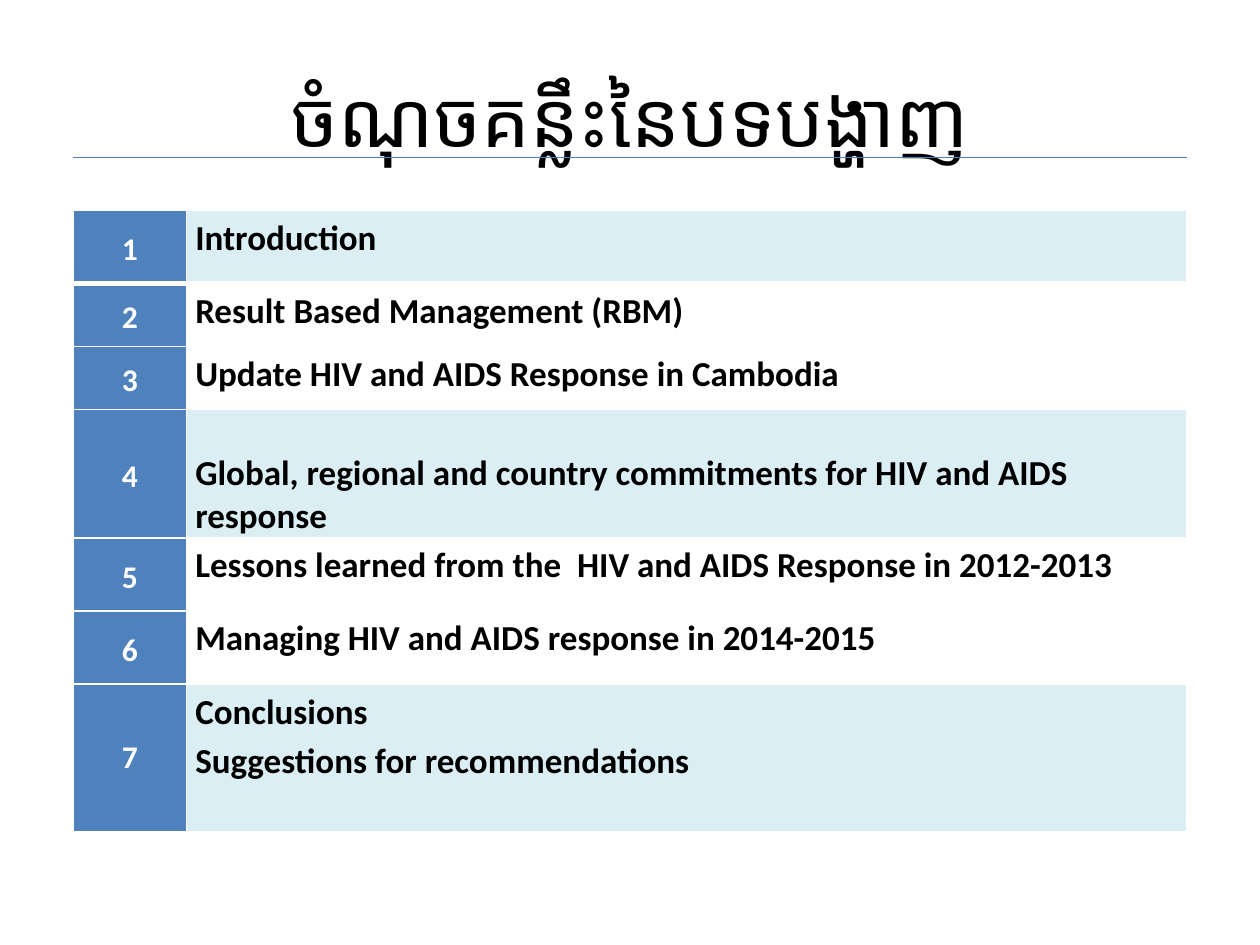
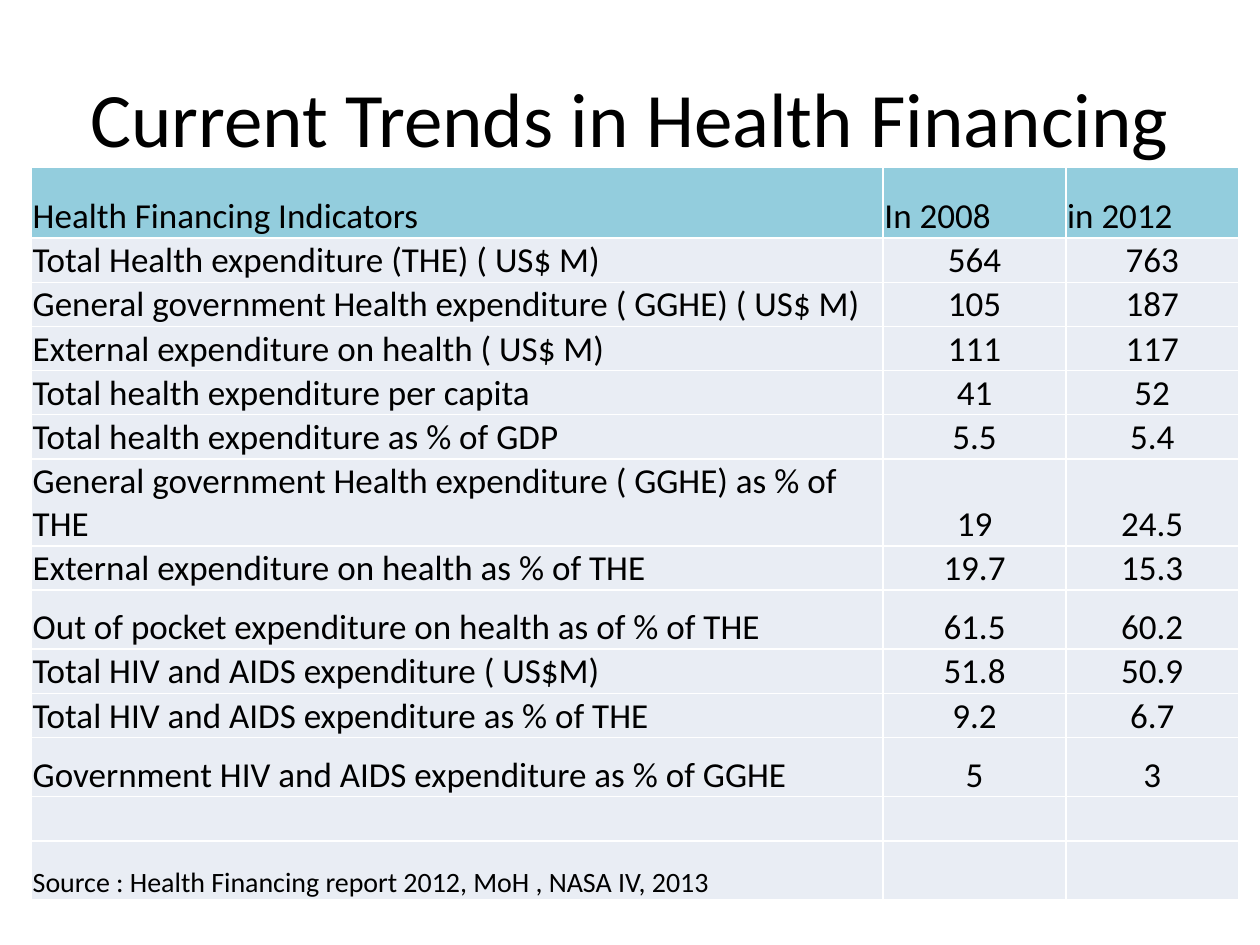
from dataclasses import dataclass

from lxml import etree
from pptx import Presentation
from pptx.dml.color import RGBColor
from pptx.enum.shapes import MSO_CONNECTOR
from pptx.enum.text import MSO_ANCHOR, PP_ALIGN
from pptx.oxml.ns import qn
from pptx.util import Inches, Pt

LEFT, CENTER = PP_ALIGN.LEFT, PP_ALIGN.CENTER
TOP, MIDDLE, BOTTOM = MSO_ANCHOR.TOP, MSO_ANCHOR.MIDDLE, MSO_ANCHOR.BOTTOM
STRAIGHT = MSO_CONNECTOR.STRAIGHT

FONT = "Calibri"
COLORS = {
    "text": "000000",
    "white": "FFFFFF",
    "number": "4F81BD",
    "band": "DBEEF4",
    "rule": "4B7EBC",
    "header": "93CDDD",
    "body": "E9EDF4",
}


@dataclass(frozen=True)
class CellStyle:
    fill: str
    size: float = 20
    color: str = "text"
    bold: bool = False
    align: int = LEFT
    anchor: int = BOTTOM
    line_spacing: float = 1.0
    margins: tuple[float, float, float, float] = (0.01, 0.01, 0.01, 0)
    top_line: float = 1
    bottom_line: float = 1


@dataclass(frozen=True)
class AgendaItem:
    text: str
    height: float
    fill: str = "white"
    top_margin: float = 0
    line_spacing: float = 1.15


@dataclass(frozen=True)
class Indicator:
    label: str
    in_2008: str = ""
    in_2012: str = ""
    height: float = 0.35
    fill: str = "body"
    size: float = 20
    value_align: int = CENTER


AGENDA = [
    AgendaItem("Introduction", 0.58, "band"),
    AgendaItem("Result Based Management (RBM)", 0.5),
    AgendaItem("Update HIV and AIDS Response in Cambodia", 0.5),
    AgendaItem("Global, regional and country commitments for HIV and AIDS response",
               1.01, "band", top_margin=0.34, line_spacing=1.0),
    AgendaItem("Lessons learned from the  HIV and AIDS Response in 2012-2013", 0.58),
    AgendaItem("Managing HIV and AIDS response in 2014-2015", 0.58),
    AgendaItem("Conclusions\nSuggestions for recommendations", 1.17, "band"),
]

INDICATORS = [
    Indicator("Health Financing Indicators", "In 2008", "in 2012", 0.56, "header",
              value_align=LEFT),
    Indicator("Total Health expenditure (THE) ( US$ M)", "564", "763"),
    Indicator("General government Health expenditure ( GGHE) ( US$ M)", "105", "187"),
    Indicator("External expenditure on health ( US$ M)", "111", "117"),
    Indicator("Total health expenditure per capita", "41", "52"),
    Indicator("Total health expenditure as % of GDP", "5.5", "5.4"),
    Indicator("General government Health expenditure ( GGHE) as % of THE", "19", "24.5", 0.69),
    Indicator("External expenditure on health as % of THE", "19.7", "15.3"),
    Indicator("Out of pocket expenditure on health as of % of THE", "61.5", "60.2", 0.47),
    Indicator("Total HIV and AIDS expenditure ( US$M)", "51.8", "50.9"),
    Indicator("Total HIV and AIDS expenditure as % of THE", "9.2", "6.7"),
    Indicator("Government HIV and AIDS expenditure as % of GGHE", "5", "3", 0.47),
    Indicator(""),
    Indicator("Source : Health Financing report 2012, MoH , NASA IV, 2013", height=0.47, size=16),
]


def rgb(name: str) -> RGBColor:
    return RGBColor.from_string(COLORS[name])


def write_text(text_frame, text: str, *, size: float, color: str = "text", bold: bool = False,
               align: int = LEFT, line_spacing: float = 1.0) -> None:
    text_frame.word_wrap = True
    for index, line in enumerate(text.split("\n")):
        paragraph = text_frame.add_paragraph() if index else text_frame.paragraphs[0]
        paragraph.alignment = align
        paragraph.line_spacing = line_spacing
        if line:
            run = paragraph.add_run()
            run.text = line
            run.font.name = FONT
            run.font.size = Pt(size)
            run.font.bold = bold
            run.font.color.rgb = rgb(color)


def add_borders(cell, top: float, bottom: float) -> None:
    properties = cell._tc.get_or_add_tcPr()
    for side, width in (("L", 1), ("R", 1), ("T", top), ("B", bottom)):
        line = etree.SubElement(properties, qn(f"a:ln{side}"), w=str(Pt(width)))
        fill = etree.SubElement(line, qn("a:solidFill"))
        etree.SubElement(fill, qn("a:srgbClr"), val=COLORS["white"])


def fill_cell(cell, text: str, style: CellStyle) -> None:
    add_borders(cell, style.top_line, style.bottom_line)
    cell.fill.solid()
    cell.fill.fore_color.rgb = rgb(style.fill)
    cell.vertical_anchor = style.anchor
    (cell.margin_left, cell.margin_top,
     cell.margin_right, cell.margin_bottom) = map(Inches, style.margins)
    write_text(cell.text_frame, text, size=style.size, color=style.color, bold=style.bold,
               align=style.align, line_spacing=style.line_spacing)


def add_titled_slide(presentation, title: str):
    slide = presentation.slides.add_slide(presentation.slide_layouts[5])
    shape = slide.shapes.title
    shape.left, shape.top = Inches(0.5), Inches(0.3)
    shape.width, shape.height = Inches(9), Inches(1.25)
    shape.text_frame.vertical_anchor = MIDDLE
    write_text(shape.text_frame, title, size=44, align=CENTER)
    return slide


def add_plain_table(slide, left: float, top: float, widths: list[float], heights: list[float]):
    table = slide.shapes.add_table(len(heights), len(widths), Inches(left), Inches(top),
                                   Inches(sum(widths)), Inches(sum(heights))).table
    table.first_row = False
    table.horz_banding = False
    for column, width in zip(table.columns, widths):
        column.width = Inches(width)
    for row, height in zip(table.rows, heights):
        row.height = Inches(height)
    return table


def add_rule(slide, left: float, right: float, top: float) -> None:
    rule = slide.shapes.add_connector(STRAIGHT, Inches(left), Inches(top),
                                      Inches(right), Inches(top))
    rule.line.color.rgb = rgb("rule")
    rule.line.width = Pt(0.75)
    etree.SubElement(rule._element.spPr, qn("a:effectLst"))


def build_agenda(presentation) -> None:
    slide = add_titled_slide(presentation, "ចំណុចគន្លឹះនៃបទបង្ហាញ")
    table = add_plain_table(slide, 0.58, 1.67, [0.9, 7.94], [item.height for item in AGENDA])
    last = len(AGENDA) - 1
    for index, item in enumerate(AGENDA):
        lines = {"top_line": 3 if index == 1 else 1, "bottom_line": 3 if index == 0 else 1}
        number_style = CellStyle("number", 18, "white", True, CENTER, MIDDLE,
                                 1.0 if index == last else 1.15, (0.07, 0, 0.07, 0), **lines)
        topic_style = CellStyle(item.fill, bold=True, anchor=TOP, line_spacing=item.line_spacing,
                                margins=(0.07, item.top_margin, 0.07, 0), **lines)
        fill_cell(table.cell(index, 0), str(index + 1), number_style)
        fill_cell(table.cell(index, 1), item.text, topic_style)
    add_rule(slide, 0.58, 9.42, 1.25)


def build_financing(presentation) -> None:
    slide = add_titled_slide(presentation, "Current Trends in Health Financing")
    table = add_plain_table(slide, 0.25, 1.33, [6.76, 1.45, 1.37],
                            [indicator.height for indicator in INDICATORS])
    for index, indicator in enumerate(INDICATORS):
        label_style = CellStyle(indicator.fill, indicator.size)
        value_style = CellStyle(indicator.fill, align=indicator.value_align)
        fill_cell(table.cell(index, 0), indicator.label, label_style)
        fill_cell(table.cell(index, 1), indicator.in_2008, value_style)
        fill_cell(table.cell(index, 2), indicator.in_2012, value_style)


def main() -> None:
    presentation = Presentation()
    presentation.slide_width, presentation.slide_height = Inches(10), Inches(7.5)
    build_agenda(presentation)
    build_financing(presentation)
    presentation.save("out.pptx")


if __name__ == "__main__":
    main()
